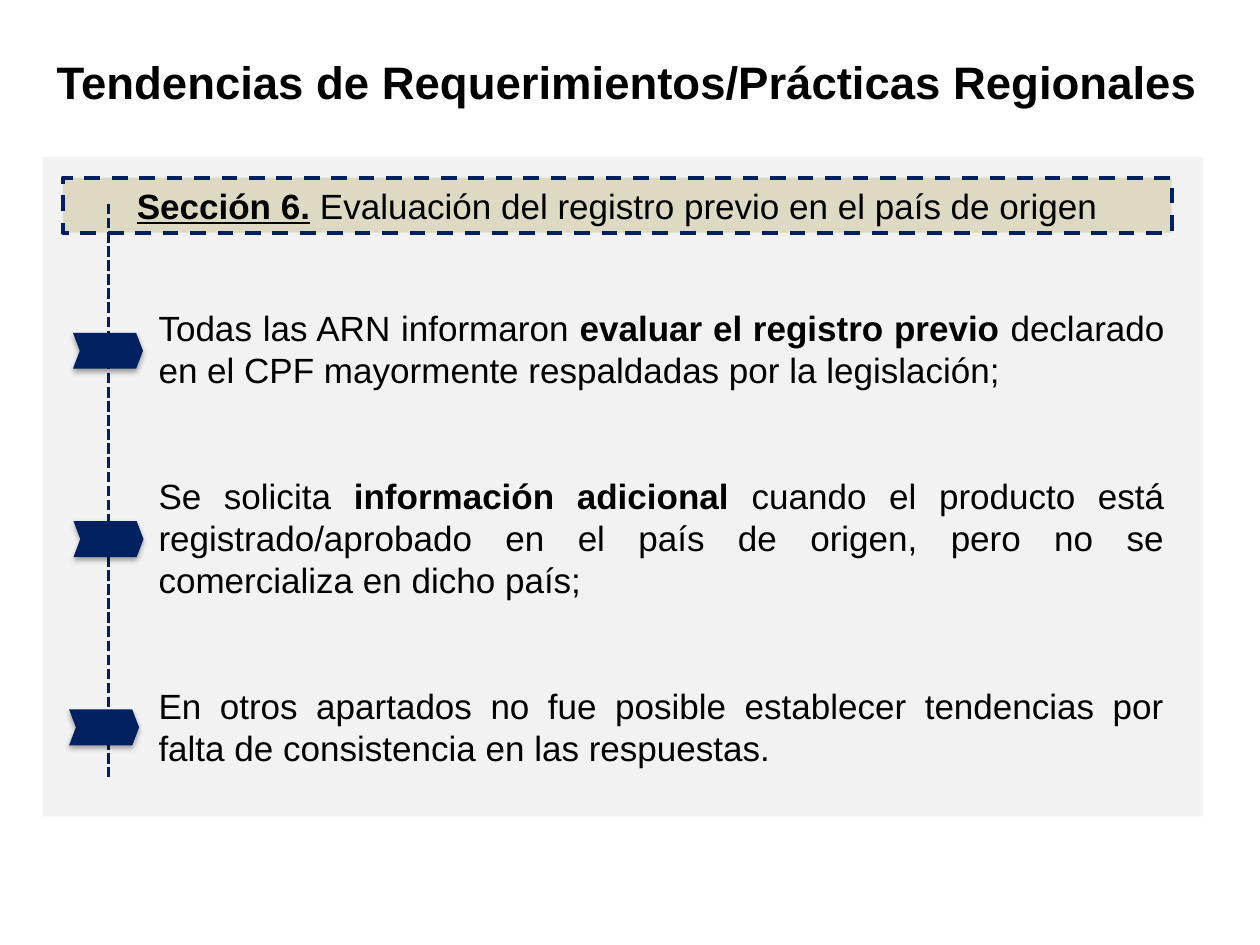
from dataclasses import dataclass

from lxml.etree import SubElement
from pptx import Presentation
from pptx.dml.color import RGBColor as Color
from pptx.enum.dml import MSO_LINE as Dash
from pptx.enum.shapes import MSO_CONNECTOR as Connector, MSO_SHAPE as Shape
from pptx.enum.text import MSO_ANCHOR as Anchor, PP_ALIGN as Align
from pptx.oxml.ns import qn
from pptx.util import Pt


@dataclass(frozen=True)
class Theme:
    font: str = "Arial"
    title_size: float = 26
    body_size: float = 20
    line_spacing: float = 24
    text: Color = Color(0x00, 0x00, 0x00)
    navy: Color = Color(0x00, 0x20, 0x60)
    panel: Color = Color(0xF2, 0xF2, 0xF2)
    banner: Color = Color(0xDD, 0xD9, 0xC3)


class SlideBuilder:
    def __init__(self, slide, theme):
        self.slide = slide
        self.theme = theme

    def add_runs(self, paragraph, parts, size, align):
        """Fill a paragraph from (text, style) parts; style holds "b" and "u" flags."""
        paragraph.alignment = align
        for text, style in parts:
            run = paragraph.add_run()
            run.text = text
            font = run.font
            font.name = self.theme.font
            font.size = Pt(size)
            font.color.rgb = self.theme.text
            font.bold = "b" in style
            font.underline = "u" in style

    def block(self, kind, left, top, width, height, fill):
        shape = self.slide.shapes.add_shape(
            kind, Pt(left), Pt(top), Pt(width), Pt(height))
        shape.shadow.inherit = False
        shape.fill.solid()
        shape.fill.fore_color.rgb = fill
        shape.line.fill.background()
        return shape

    def banner(self, left, top, width, height, parts):
        shape = self.block(Shape.RECTANGLE, left, top, width, height, self.theme.banner)
        shape.line.color.rgb = self.theme.navy
        shape.line.width = Pt(2.25)
        shape.line.dash_style = Dash.DASH
        text_frame = shape.text_frame
        text_frame.word_wrap = True
        text_frame.vertical_anchor = Anchor.MIDDLE
        self.add_runs(text_frame.paragraphs[0], parts, self.theme.body_size, Align.CENTER)

    def text_box(self, left, top, width, height):
        box = self.slide.shapes.add_textbox(Pt(left), Pt(top), Pt(width), Pt(height))
        box.text_frame.word_wrap = True
        return box.text_frame

    def title(self, left, top, width, height, text):
        text_frame = self.text_box(left, top, width, height)
        text_frame.vertical_anchor = Anchor.MIDDLE
        self.add_runs(text_frame.paragraphs[0], [(text, "b")],
                      self.theme.title_size, Align.CENTER)

    def statements(self, left, top, width, height, items):
        """Justified paragraphs, two lines apart."""
        text_frame = self.text_box(left, top, width, height)
        for index, parts in enumerate(items):
            paragraph = text_frame.add_paragraph() if index else text_frame.paragraphs[0]
            paragraph.line_spacing = Pt(self.theme.line_spacing)
            if index:
                paragraph.space_before = Pt(2 * self.theme.line_spacing)
            self.add_runs(paragraph, parts, self.theme.body_size, Align.JUSTIFY)

    def timeline(self, x, top, bottom):
        line = self.slide.shapes.add_connector(
            Connector.STRAIGHT, Pt(x), Pt(top), Pt(x), Pt(bottom))
        line.line.color.rgb = self.theme.navy
        line.line.width = Pt(2)
        line.line.dash_style = Dash.SQUARE_DOT
        SubElement(line._element.spPr, qn("a:effectLst"))

    def marker(self, left, top):
        """A chevron with a soft shadow below it."""
        shape = self.block(Shape.CHEVRON, left, top, 40, 20.5, self.theme.navy)
        shape.adjustments[0] = 0.19
        effects = shape._element.spPr.find(qn("a:effectLst"))
        shadow = SubElement(effects, qn("a:outerShdw"), blurRad=str(Pt(3.1)),
                            dist=str(Pt(1.8)), dir="5400000", rotWithShape="0")
        color = SubElement(shadow, qn("a:srgbClr"), val="000000")
        SubElement(color, qn("a:alpha"), val="35000")


def main():
    presentation = Presentation()
    presentation.slide_width = Pt(720)
    presentation.slide_height = Pt(540)
    slide = presentation.slides.add_slide(presentation.slide_layouts[6])
    theme = Theme()
    builder = SlideBuilder(slide, theme)

    builder.block(Shape.RECTANGLE, 24.5, 89.5, 663, 377, theme.panel)
    builder.banner(36, 101.5, 633.6, 31.5, [
        ("Sección 6.", "bu"),
        (" Evaluación del registro previo en el país de origen", ""),
    ])
    builder.statements(83.5, 171.5, 589, 273.5, [
        [("Todas las ARN informaron ", ""),
         ("evaluar el registro previo ", "b"),
         ("declarado en el CPF mayormente respaldadas por la legislación;", "")],
        [("Se solicita ", ""),
         ("información adicional ", "b"),
         ("cuando el producto está registrado/aprobado en el país de origen, "
          "pero no se comercializa en dicho país;", "")],
        [("En otros apartados no fue posible establecer tendencias por "
          "falta de consistencia en las respuestas.", "")],
    ])
    builder.title(-1.5, 30, 720, 32.5,
                  "Tendencias de Requerimientos/Prácticas Regionales")
    builder.timeline(62, 116.5, 444)
    for index, left in enumerate((41.7, 42, 39.5)):
        builder.marker(left, 190.2 + index * 107.6)

    presentation.save("out.pptx")


if __name__ == "__main__":
    main()
